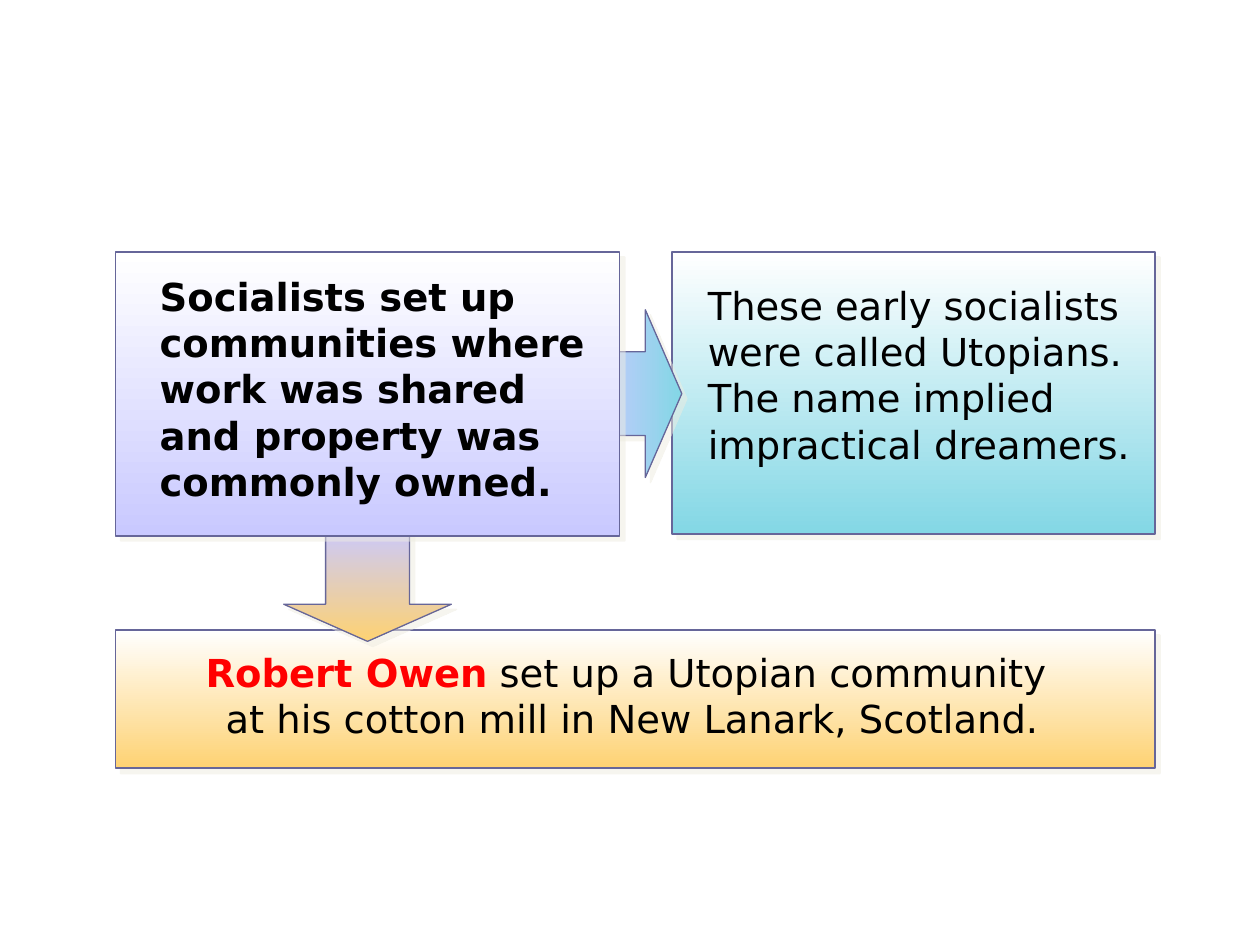
from lxml.etree import SubElement
from pptx import Presentation
from pptx.dml.color import RGBColor
from pptx.enum.shapes import MSO_SHAPE
from pptx.enum.text import MSO_AUTO_SIZE, PP_ALIGN
from pptx.oxml.ns import qn
from pptx.util import Cm, Pt

THEME = dict(font="DejaVu Sans", size=22, text="000000", key="FF0000",
             line="666699", shadow="EEECE1", white="FFFFFF",
             lilac="C9C9FF", aqua="83D7E5", gold="FED273")

# Content: runs are (text, bold, colour)
COMMUNITIES = [("Socialists set up communities where work was shared "
                "and property was commonly owned.", True, "text")]
UTOPIANS = [("These early socialists were called Utopians. "
             "The name implied impractical dreamers.", False, "text")]
OWEN = [("Robert Owen", True, "key"),
        (" set up a Utopian community \vat his cotton mill in New Lanark, Scotland.",
         False, "text")]

# Layout in cm: left, top, width, height
LEFT, TOP, WIDTH = 2.33, 5.08, 20.95
LEFT_BOX = (LEFT, TOP, 10.16, 5.72)
RIGHT_W = 9.73
RIGHT_BOX = (LEFT + WIDTH - RIGHT_W, TOP, RIGHT_W, 5.69)
BOTTOM_BOX = (LEFT, 12.7, WIDTH, 2.79)

# Parts from back to front: box, end colour, runs, text area, alignment
RIGHT = (RIGHT_BOX, "aqua", UTOPIANS, (14.02, 5.56, 9.17, 4.04), PP_ALIGN.LEFT)
BOTTOM = (BOTTOM_BOX, "gold", OWEN, (2.67, 12.95, 20.14, 2.11), PP_ALIGN.CENTER)
FRONT = (LEFT_BOX, "lilac", COMMUNITIES, (2.97, 5.38, 9.53, 4.98), PP_ALIGN.LEFT)
# Arrows: area before turning, end colour, head ratio, rotation
ARROWS = [((5.72, 10.59, 3.38, 2.34), "gold", 0.32, 0),
          ((11.18, 7.06, 3.38, 1.75), "aqua", 0.42, 270)]


def rgb(name):
    return RGBColor.from_string(THEME[name])


def add_shaded(s, kind, area, start, end, line_width):
    sp = s.shapes.add_shape(kind, *map(Cm, area))
    # Vertical gradient and outline
    sp.fill.gradient()
    sp.fill.gradient_angle = 270
    for stop, name in zip(sp.fill.gradient_stops, (start, end)):
        stop.color.rgb = rgb(name)
    sp.line.color.rgb = rgb("line")
    sp.line.width = Pt(line_width)
    # Soft offset shadow
    sp.shadow.inherit = False
    effects = sp._element.spPr.find(qn("a:effectLst"))
    shadow = SubElement(effects, qn("a:outerShdw"), dist=str(Pt(4.2)),
                        dir="2700000", algn="ctr", rotWithShape="0")
    color = SubElement(shadow, qn("a:srgbClr"), val=THEME["shadow"])
    SubElement(color, qn("a:alpha"), val="50000")
    return sp


def add_box(s, area, end, runs, text_area, align):
    add_shaded(s, MSO_SHAPE.RECTANGLE, area, "white", end, 1)
    tf = s.shapes.add_textbox(*map(Cm, text_area)).text_frame
    tf.word_wrap = True
    tf.auto_size = MSO_AUTO_SIZE.SHAPE_TO_FIT_TEXT
    p = tf.paragraphs[0]
    p.alignment = align
    for text, bold, color in runs:
        # A line break splits the text into several runs
        for i, part in enumerate(text.split("\v")):
            if i:
                p.add_line_break()
            r = p.add_run()
            r.text = part
            r.font.name = THEME["font"]
            r.font.size = Pt(THEME["size"])
            r.font.bold = bold
            r.font.color.rgb = rgb(color)


def main():
    prs = Presentation()
    prs.slide_width, prs.slide_height = Cm(25.4), Cm(19.05)
    s = prs.slides.add_slide(prs.slide_layouts[6])

    # Boxes behind the arrows
    for box in (RIGHT, BOTTOM):
        add_box(s, *box)

    # Arrows
    for area, end, head, rotation in ARROWS:
        sp = add_shaded(s, MSO_SHAPE.DOWN_ARROW, area, "lilac", end, 0.75)
        sp.adjustments[0], sp.adjustments[1] = 0.5, head
        sp.rotation = rotation

    # Box in front of the arrows
    add_box(s, *FRONT)
    prs.save("out.pptx")


if __name__ == "__main__":
    main()
